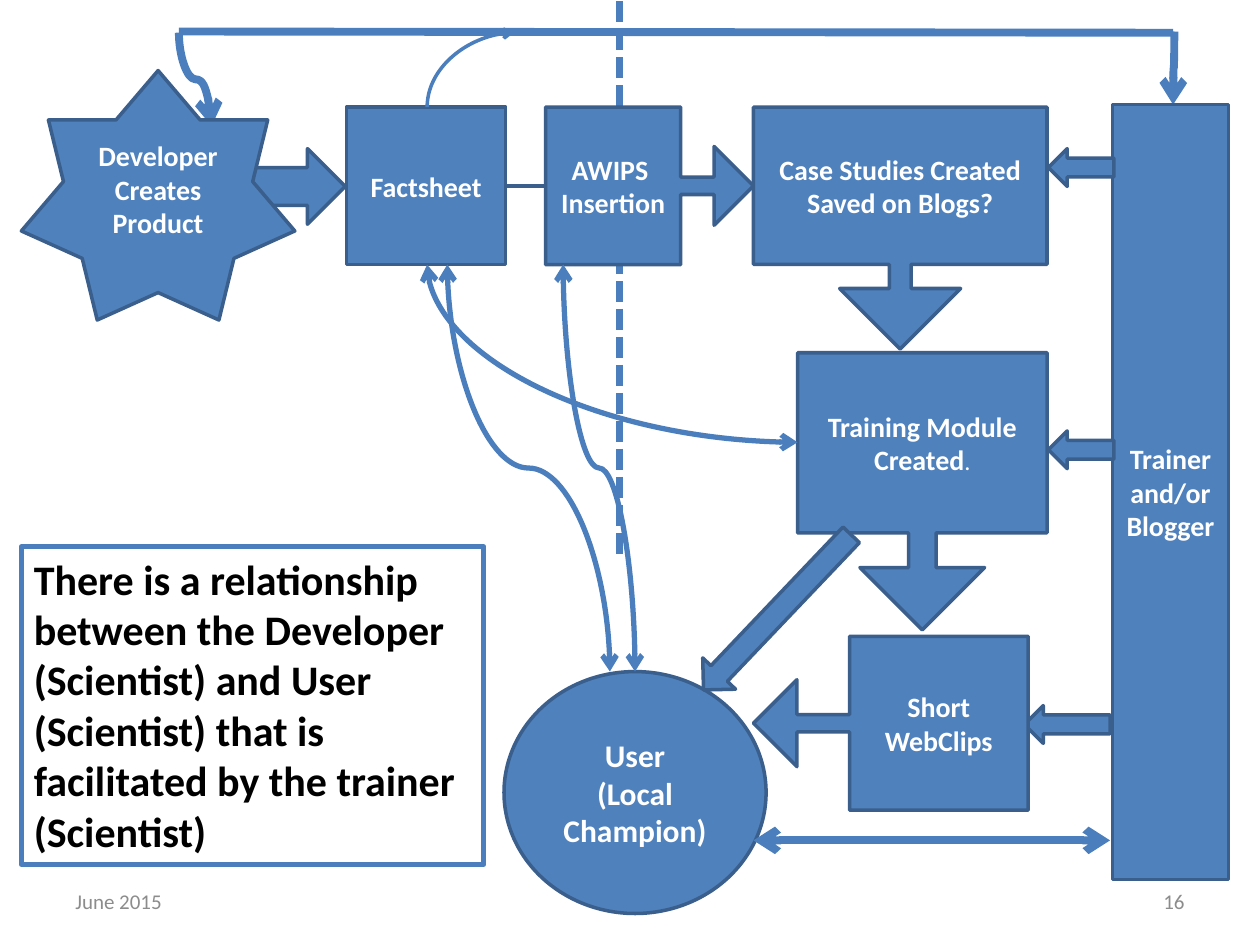
import pptx
import pptx.util
import pptx.dml.color
import pptx.enum.dml
import pptx.enum.shapes
import pptx.enum.text
import pptx.oxml
import pptx.oxml.ns

Inches, Pt = pptx.util.Inches, pptx.util.Pt
RGBColor = pptx.dml.color.RGBColor
SHAPE = pptx.enum.shapes.MSO_SHAPE
CONNECTOR = pptx.enum.shapes.MSO_CONNECTOR
ALIGN = pptx.enum.text.PP_ALIGN
ANCHOR = pptx.enum.text.MSO_ANCHOR

BLUE = RGBColor(0x4F, 0x81, 0xBD)
OUTLINE = RGBColor(0x3A, 0x5F, 0x8C)
LINE_BLUE = RGBColor(0x4B, 0x7E, 0xBC)
WHITE = RGBColor(0xFF, 0xFF, 0xFF)
BLACK = RGBColor(0, 0, 0)
GRAY = RGBColor(0x8C, 0x8C, 0x8C)


class FlowSlide:
    font = "Calibri"

    def __init__(self, slide):
        self.slide = slide

    def fill_text(self, frame, paragraphs, size, color, bold=True, align=ALIGN.CENTER):
        """Each paragraph is a string."""
        frame.word_wrap = True
        for index, text in enumerate(paragraphs):
            paragraph = frame.paragraphs[0] if index == 0 else frame.add_paragraph()
            paragraph.alignment = align
            self.add_run(paragraph, text, size, color, bold)

    def add_run(self, paragraph, text, size, color, bold):
        run = paragraph.add_run()
        run.text = text
        run.font.name = self.font
        run.font.size = Pt(size)
        run.font.bold = bold
        run.font.color.rgb = color

    def block(self, kind, box, paragraphs=(), size=16, adjustments=(), rotation=0):
        shape = self.slide.shapes.add_shape(kind, *map(Inches, box))
        shape.shadow.inherit = False
        shape.fill.solid()
        shape.fill.fore_color.rgb = BLUE
        shape.line.color.rgb = OUTLINE
        shape.line.width = Pt(2)
        shape.rotation = rotation
        for index, value in enumerate(adjustments):
            shape.adjustments[index] = value
        shape.text_frame.vertical_anchor = ANCHOR.MIDDLE
        self.fill_text(shape.text_frame, paragraphs, size, WHITE)
        return shape

    def text(self, box, content, size, color, bold=False, align=ALIGN.LEFT,
             anchor=ANCHOR.MIDDLE):
        shape = self.slide.shapes.add_textbox(*map(Inches, box))
        shape.text_frame.vertical_anchor = anchor
        self.fill_text(shape.text_frame, [content], size, color, bold, align)
        return shape

    def line(self, start, end, width, ends=(), kind=CONNECTOR.STRAIGHT):
        connector = self.slide.shapes.add_connector(
            kind, *map(Inches, (*start, *end)))
        connector.line.color.rgb = LINE_BLUE
        connector.line.width = Pt(width)
        properties = connector._element.spPr
        outline = properties.find(pptx.oxml.ns.qn("a:ln"))
        for tag in ends:
            arrow = pptx.oxml.parse_xml(
                f'<a:{tag} {pptx.oxml.ns.nsdecls("a")} type="arrow"/>')
            outline.append(arrow)
        properties.append(pptx.oxml.parse_xml(
            f'<a:effectLst {pptx.oxml.ns.nsdecls("a")}/>'))
        return connector

    def curve(self, start, end, width, ends=(), quarter=False):
        """Curve that leaves vertically: laid out flat, then turned by 90 degrees."""
        (x1, y1), (x2, y2) = start, end
        middle_x, middle_y = (x1 + x2) / 2, (y1 + y2) / 2
        half_x, half_y = (y2 - y1) / 2, (x1 - x2) / 2
        connector = self.line((middle_x - half_x, middle_y - half_y),
                              (middle_x + half_x, middle_y + half_y),
                              width, ends, CONNECTOR.CURVE)
        properties = connector._element.spPr
        properties.find(pptx.oxml.ns.qn("a:xfrm")).set("rot", str(90 * 60000))
        if quarter:
            properties.find(pptx.oxml.ns.qn("a:prstGeom")).set("prst", "curvedConnector2")
        return connector


def main():
    presentation = pptx.Presentation()
    presentation.slide_width, presentation.slide_height = Inches(10), Inches(7.5)
    flow = FlowSlide(presentation.slides.add_slide(presentation.slide_layouts[6]))
    to_end, both = ("tailEnd",), ("headEnd", "tailEnd")

    # Product, factsheet and training steps
    flow.block(SHAPE.LEFT_ARROW, (8.13, 5.6, 0.68, 0.3))
    flow.block(SHAPE.UP_DOWN_ARROW, (1.91, 0.95, 0.6, 1.06), rotation=90)
    flow.block(SHAPE.RIGHT_ARROW_CALLOUT, (2.75, 0.85, 1.58, 1.25), ["Factsheet"],
               adjustments=(0, 0, 0.21, 0.8))
    training = flow.block(SHAPE.DOWN_ARROW_CALLOUT, (6.33, 2.8, 1.98, 2.2),
                          ["Training Module Created"],
                          adjustments=(0.11, 0.25, 0.25, 0.65))
    flow.add_run(training.text_frame.paragraphs[0], ".", 14, WHITE, False)

    # Divider between developer and user sides
    divider = flow.line((4.92, 0.01), (4.92, 4.42), 4)
    divider.line.dash_style = pptx.enum.dml.MSO_LINE.SQUARE_DOT

    flow.block(SHAPE.RIGHT_ARROW_CALLOUT, (4.33, 0.85, 1.65, 1.25),
               ["AWIPS ", "Insertion"], adjustments=(0.11, 0.25, 0.25, 0.65))
    flow.block(SHAPE.DOWN_ARROW_CALLOUT, (5.98, 0.85, 2.33, 1.92),
               ["Case Studies Created", "Saved on Blogs?"],
               adjustments=(0.09, 0.25, 0.25, 0.65))
    flow.curve((3.39, 2.1), (6.33, 3.51), 3, both, quarter=True)
    flow.block(SHAPE.OVAL, (4, 5.33, 2.08, 1.92), ["User", "(Local Champion)"], 18)

    # Link from trainer to developer across the top
    flow.line((1.42, 0.25), (9.31, 0.26), 4.5)
    flow.curve((1.42, 0.26), (1.68, 1), 4.5, to_end)
    flow.curve((9.32, 0.25), (9.31, 0.83), 4.5, to_end)

    # User feedback, videos and developer
    flow.curve((4.47, 2.1), (5.04, 5.33), 3, both)
    flow.block(SHAPE.LEFT_ARROW_CALLOUT, (5.98, 5.05, 2.18, 1.38), ["Short WebClips"],
               adjustments=(0.1, 0.25, 0.25, 0.65))
    flow.block(SHAPE.STAR_7_POINT, (0.17, 0.56, 2.17, 1.98),
               ["Developer Creates Product"])
    flow.curve((3.55, 2.1), (4.84, 5.33), 3, both)

    # Trainer column and its arrows
    flow.block(SHAPE.RECTANGLE, (8.83, 0.83, 0.92, 6.15),
               ["Trainer", "and/or", "Blogger"])
    for top in (1.18, 3.42):
        flow.block(SHAPE.LEFT_ARROW, (8.32, top, 0.52, 0.3))
    flow.line((5.98, 6.67), (8.81, 6.67), 4.5, both)
    flow.block(SHAPE.LEFT_ARROW, (5.32, 4.68, 1.7, 0.36), rotation=313.6)

    # Summary
    summary = flow.text(
        (0.17, 4.34, 3.67, 2.52),
        "There is a relationship between the Developer (Scientist) and User "
        "(Scientist) that is facilitated by the trainer (Scientist)",
        24, BLACK, bold=True, anchor=ANCHOR.TOP)
    summary.line.color.rgb = LINE_BLUE
    summary.line.width = Pt(3)
    flow.curve((3.39, 0.85), (4.08, 0.26), 2, to_end, quarter=True)

    # Footer
    flow.text((0.5, 6.95, 2.33, 0.4), "June 2015", 12, GRAY)
    flow.text((7.17, 6.95, 2.33, 0.4), "16", 12, GRAY, align=ALIGN.RIGHT)

    presentation.save("out.pptx")


if __name__ == "__main__":
    main()
